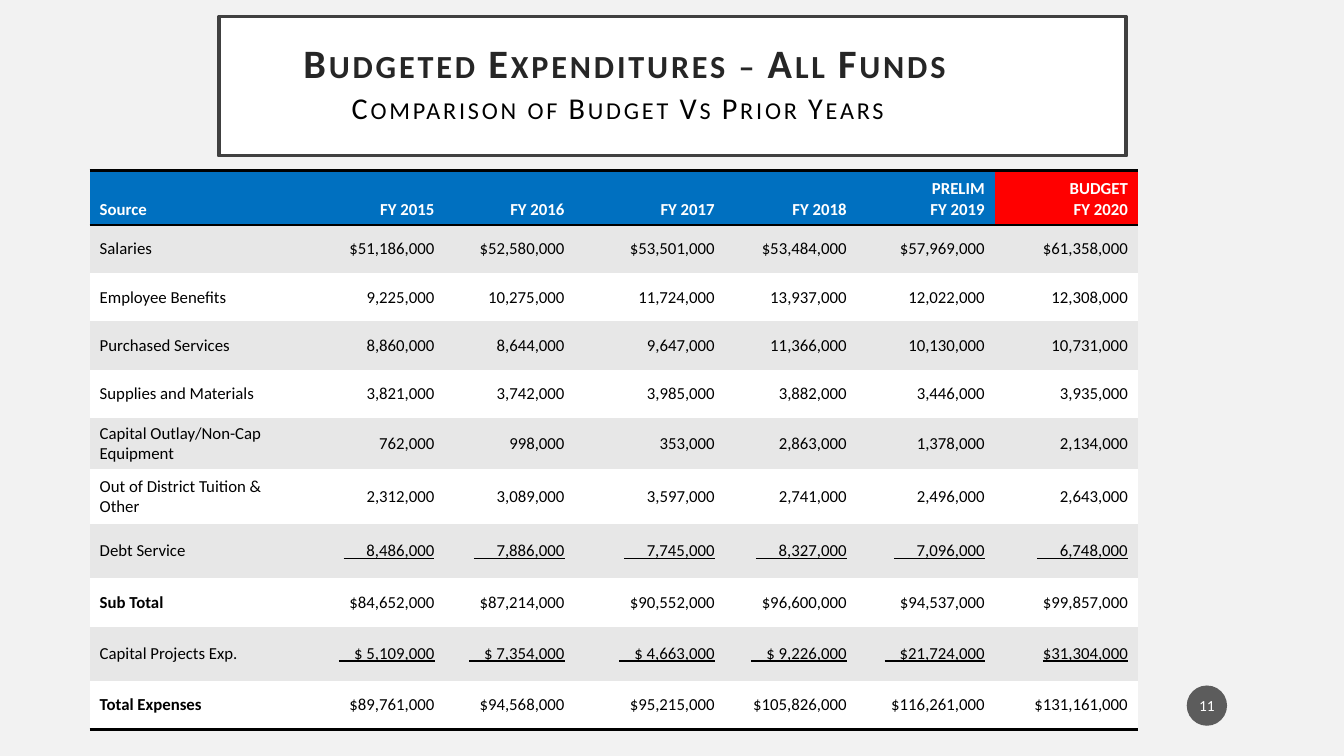
from dataclasses import dataclass

from lxml import etree
from pptx import Presentation, util as u
from pptx.dml import color
from pptx.enum import shapes, text
from pptx.oxml import ns

COLORS = {
    "page": "F2F2F2", "white": "FFFFFF", "black": "000000", "frame": "404040",
    "heading": "262626", "header": "0070C0", "budget": "FF0000",
    "band": "E7E7E7", "badge": "1D1D1D",
}
FONT = "Calibri"
SLIDE_WIDTH, SLIDE_HEIGHT = u.Inches(13.33), u.Inches(7.5)
NO_STYLE = "{2D5ABB26-0587-4C30-8999-92F81FD0307C}"
CENTER, RIGHT, LEFT = text.PP_ALIGN.CENTER, text.PP_ALIGN.RIGHT, text.PP_ALIGN.LEFT
MIDDLE, BOTTOM = text.MSO_ANCHOR.MIDDLE, text.MSO_ANCHOR.BOTTOM


@dataclass(frozen=True)
class Area:
    """Left, top, width and height as percentages of the slide."""
    left: float
    top: float
    width: float
    height: float

    def box(self) -> tuple[int, int, int, int]:
        return (across(self.left), down(self.top), across(self.width), down(self.height))


@dataclass(frozen=True)
class Style:
    size: float = 12
    color: str = "black"
    bold: bool = False
    underline: bool = False


@dataclass(frozen=True)
class Expense:
    source: str
    amounts: tuple[str, ...]
    height: float = 6.4
    total: bool = False
    underline: bool = False
    lead: int = 0


HEADING_AREA = Area(16.28, 2.2, 67.52, 18.4)
BUDGET_AREA = Area(6.67, 22.53, 77.94, 73.6)
BADGE_AREA = Area(88.3, 90.67, 3, 5.33)
COLUMN_SHARES = (16.73, 9.68, 9.68, 11.18, 9.82, 10.27, 10.65)
HEADER_HEIGHT = 7.2
HEADINGS = (
    ("Source",), ("FY 2015",), ("FY 2016",), ("FY 2017",), ("FY 2018",),
    ("PRELIM", "FY 2019"), ("BUDGET", "FY 2020"),
)
EXPENSES = (
    Expense("Salaries", ("$51,186,000", "$52,580,000", "$53,501,000",
                         "$53,484,000", "$57,969,000", "$61,358,000")),
    Expense("Employee Benefits", ("9,225,000", "10,275,000", "11,724,000",
                                  "13,937,000", "12,022,000", "12,308,000")),
    Expense("Purchased Services", ("8,860,000", "8,644,000", "9,647,000",
                                   "11,366,000", "10,130,000", "10,731,000")),
    Expense("Supplies and Materials", ("3,821,000", "3,742,000", "3,985,000",
                                       "3,882,000", "3,446,000", "3,935,000")),
    Expense("Capital Outlay/Non-Cap Equipment", ("762,000", "998,000", "353,000",
                                                 "2,863,000", "1,378,000", "2,134,000")),
    Expense("Out of District Tuition & Other", ("2,312,000", "3,089,000", "3,597,000",
                                                "2,741,000", "2,496,000", "2,643,000"), 7.2),
    Expense("Debt Service", ("8,486,000", "7,886,000", "7,745,000",
                             "8,327,000", "7,096,000", "6,748,000"), 7.2,
            underline=True, lead=6),
    Expense("Sub Total", ("$84,652,000", "$87,214,000", "$90,552,000",
                          "$96,600,000", "$94,537,000", "$99,857,000"), total=True),
    Expense("Capital Projects Exp.", ("$ 5,109,000", "$ 7,354,000", "$ 4,663,000",
                                      "$ 9,226,000", "$21,724,000", "$31,304,000"), 7.2,
            underline=True, lead=4),
    Expense("Total Expenses", ("$89,761,000", "$94,568,000", "$95,215,000",
                               "$105,826,000", "$116,261,000", "$131,161,000"), total=True),
)


def across(percent: float) -> int:
    return int(SLIDE_WIDTH * percent / 100)


def down(percent: float) -> int:
    return int(SLIDE_HEIGHT * percent / 100)


def rgb(name: str) -> color.RGBColor:
    return color.RGBColor.from_string(COLORS[name])


def paint(fill, name: str) -> None:
    fill.solid()
    fill.fore_color.rgb = rgb(name)


def add_run(paragraph, words: str, style: Style):
    run = paragraph.add_run()
    run.text = words
    font = run.font
    font.name, font.size, font.bold = FONT, u.Pt(style.size), style.bold
    font.underline = style.underline
    font.color.rgb = rgb(style.color)
    return run


def rule_cell(cell, edge: str) -> None:
    line = etree.SubElement(cell._tc.get_or_add_tcPr(), ns.qn(f"a:{edge}"), w=str(u.Pt(2)))
    solid = etree.SubElement(line, ns.qn("a:solidFill"))
    etree.SubElement(solid, ns.qn("a:srgbClr"), val=COLORS["black"])


def fill_cell(cell, lines: tuple[str, ...], style: Style, background: str,
              align, anchor, edges: tuple[str, ...] = ()) -> None:
    cell.vertical_anchor = anchor
    for edge in edges:
        rule_cell(cell, edge)
    paint(cell.fill, background)
    for number, line in enumerate(lines):
        frame = cell.text_frame
        paragraph = frame.add_paragraph() if number else frame.paragraphs[0]
        paragraph.alignment = align
        add_run(paragraph, line, style)


def add_heading(slide) -> None:
    heading = slide.shapes.title
    heading.left, heading.top, heading.width, heading.height = HEADING_AREA.box()
    paint(heading.fill, "white")
    heading.line.color.rgb = rgb("frame")
    heading.line.width = u.Pt(2.5)
    frame = heading.text_frame
    frame.word_wrap = True
    frame.auto_size = text.MSO_AUTO_SIZE.NONE
    frame.vertical_anchor = MIDDLE
    frame.margin_left = frame.margin_right = u.Inches(0.2)
    frame.margin_top = frame.margin_bottom = u.Inches(0.2)
    paragraph = frame.paragraphs[0]
    paragraph.alignment = CENTER
    paragraph.line_spacing = u.Pt(28)
    headline = add_run(paragraph, "Budgeted Expenditures – All Funds",
                       Style(28.8, "heading", True))
    paragraph.add_line_break()
    subtitle = add_run(paragraph, "Comparison of Budget Vs Prior Years ", Style(21.6))
    for run in (headline, subtitle):
        properties = run.font._element
        properties.set("cap", "small")
        properties.set("spc", "200")


def add_budget(slide) -> None:
    table = slide.shapes.add_table(len(EXPENSES) + 1, len(HEADINGS), *BUDGET_AREA.box()).table
    table.first_row = table.horz_banding = False
    table._tbl.tblPr.find(ns.qn("a:tableStyleId")).text = NO_STYLE
    for column, share in zip(table.columns, COLUMN_SHARES):
        column.width = across(share)
    table.rows[0].height = down(HEADER_HEIGHT)
    for column, lines in enumerate(HEADINGS):
        background = "budget" if column == len(HEADINGS) - 1 else "header"
        fill_cell(table.cell(0, column), lines, Style(color="white", bold=True), background,
                  RIGHT if column else LEFT, BOTTOM, ("lnT", "lnB"))
    for row, expense in enumerate(EXPENSES, 1):
        table.rows[row].height = down(expense.height)
        background = "band" if row % 2 else "white"
        edges = ("lnB",) if row == len(EXPENSES) else ()
        fill_cell(table.cell(row, 0), (expense.source,), Style(bold=expense.total),
                  background, LEFT, MIDDLE, edges)
        for column, amount in enumerate(expense.amounts, 1):
            lead = 0 if amount == "$31,304,000" else expense.lead
            fill_cell(table.cell(row, column), (" " * lead + amount,),
                      Style(underline=expense.underline), background, RIGHT, MIDDLE, edges)


def add_page_badge(slide) -> None:
    badge = slide.shapes.add_shape(shapes.MSO_SHAPE.OVAL, *BADGE_AREA.box())
    badge.shadow.inherit = False
    badge.line.fill.background()
    paint(badge.fill, "badge")
    tint = badge._element.spPr.find(".//" + ns.qn("a:srgbClr"))
    etree.SubElement(tint, ns.qn("a:alpha"), val="70000")
    frame = badge.text_frame
    frame.margin_left = frame.margin_right = u.Inches(0.02)
    frame.vertical_anchor = MIDDLE
    frame.paragraphs[0].alignment = CENTER
    add_run(frame.paragraphs[0], "11", Style(11, "white"))


def main() -> None:
    deck = Presentation()
    deck.slide_width, deck.slide_height = SLIDE_WIDTH, SLIDE_HEIGHT
    slide = deck.slides.add_slide(deck.slide_layouts[5])
    paint(slide.background.fill, "page")
    add_heading(slide)
    add_budget(slide)
    add_page_badge(slide)
    deck.save("out.pptx")


if __name__ == "__main__":
    main()
